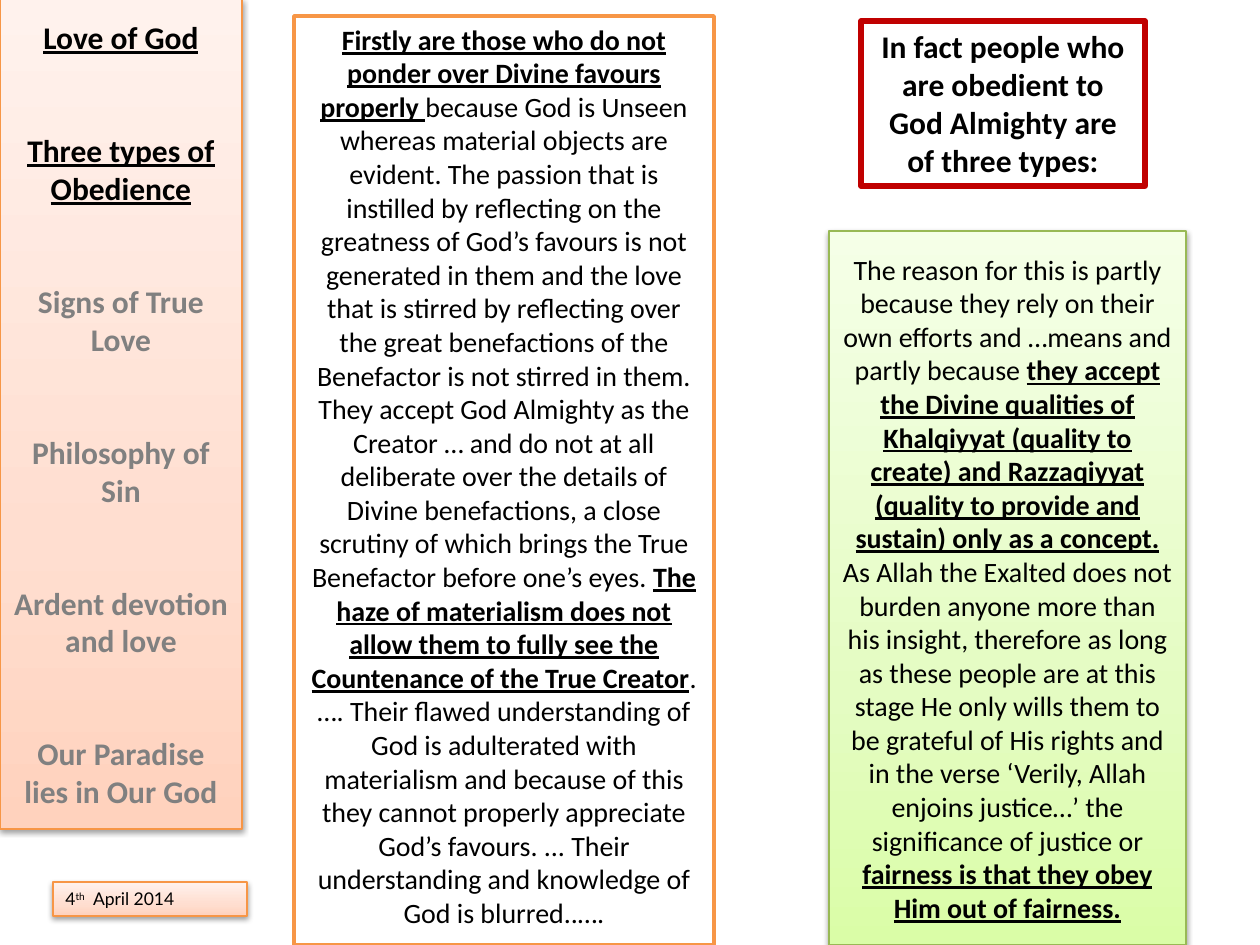
import copy

import pptx
import pptx.util
from pptx.dml.color import RGBColor
from pptx.enum.shapes import MSO_SHAPE
from pptx.enum.text import MSO_ANCHOR, MSO_AUTO_SIZE, PP_ALIGN
from pptx.oxml import parse_xml
from pptx.oxml.ns import nsdecls, qn

PX_PER_INCH = 126

BLACK = RGBColor(0x00, 0x00, 0x00)
WHITE = RGBColor(0xFF, 0xFF, 0xFF)
GREY = RGBColor(0x80, 0x80, 0x80)
RED = RGBColor(0xC0, 0x00, 0x00)
ORANGE = RGBColor(0xF7, 0x96, 0x46)
GREEN = RGBColor(0x98, 0xB9, 0x55)
# Gradient colours, from the bottom edge to the top
PEACH_FADE = [RGBColor(0xFF, 0xD2, 0xBD), RGBColor(0xFF, 0xDE, 0xD0), RGBColor(0xFF, 0xF2, 0xED)]
LIME_FADE = [RGBColor(0xDA, 0xFD, 0xA7), RGBColor(0xE4, 0xFC, 0xC2), RGBColor(0xF5, 0xFF, 0xE7)]
FADE_POSITIONS = [0, 0.35, 1]

HEADING = "In fact people who are obedient to God Almighty are of three types:"

# Section name, and whether it has been reached
SECTIONS = [
    ("Love of God", True),
    ("Three types of Obedience", True),
    ("Signs of True Love", False),
    ("Philosophy of Sin", False),
    ("Ardent devotion and love", False),
    ("Our Paradise lies in Our God", False),
]

# Passages as (text, emphasised)
FIRST_TYPE = [
    ("Firstly are those who do not ponder over Divine favours properly ", True),
    ("because God is Unseen whereas material objects are evident. The passion that is "
     "instilled by reflecting on the greatness of God’s favours is not generated in them "
     "and the love that is stirred by reflecting over the great benefactions of the "
     "Benefactor is not stirred in them. They accept God Almighty as the Creator … and do "
     "not at all deliberate over the details of Divine benefactions, a close scrutiny of "
     "which brings the True Benefactor before one’s eyes. ", False),
    ("The haze of materialism does not allow them to fully see the Countenance of the "
     "True Creator", True),
    (". …. Their flawed understanding of God is adulterated with materialism and because "
     "of this they cannot properly appreciate God’s favours. ... Their understanding and "
     "knowledge of God is blurred..….", False),
]
REASON = [
    ("The reason for this is partly because they rely on their own efforts and …means and "
     "partly because ", False),
    ("they accept the Divine qualities of Khalqiyyat (quality to create) and Razzaqiyyat "
     "(quality to provide and sustain) only as a concept.", True),
    (" As Allah the Exalted does not burden anyone more than his insight, therefore as "
     "long as these people are at this stage He only wills them to be grateful of His "
     "rights and in the verse ‘Verily, Allah enjoins justice…’ the significance of "
     "justice or ", False),
    ("fairness is that they obey Him out of fairness.", True),
]


def px(n):
    return pptx.util.Emu(round(n * 914400 / PX_PER_INCH))


def place(sp, x, y, w, h):
    sp.left, sp.top, sp.width, sp.height = px(x), px(y), px(w), px(h)


def add_box(s, x, y, w, h):
    sp = s.shapes.add_shape(MSO_SHAPE.RECTANGLE, px(x), px(y), px(w), px(h))
    sp.shadow.inherit = False
    return sp


def outline(sp, color, width):
    sp.line.color.rgb = color
    sp.line.width = pptx.util.Pt(width)


def style_plain(sp, line, width):
    sp.fill.solid()
    sp.fill.fore_color.rgb = WHITE
    outline(sp, line, width)


def style_faded(sp, colors, line):
    """Three-stop vertical gradient, thin outline and a soft shadow below."""
    sp.fill.gradient()
    sp.fill.gradient_angle = 90
    sp_pr = sp._element.spPr
    stops = sp_pr.find(".//" + qn("a:gsLst"))
    stops.append(copy.deepcopy(stops[-1]))
    for stop, pos, color in zip(sp.fill.gradient_stops, FADE_POSITIONS, colors):
        stop.position = pos
        stop.color.rgb = color
    outline(sp, line, 0.75)
    sp.shadow.inherit = False
    sp_pr.find(qn("a:effectLst")).append(parse_xml(
        f'<a:outerShdw {nsdecls("a")} blurRad="40000" dist="20000" dir="5400000" rotWithShape="0">'
        '<a:srgbClr val="000000"><a:alpha val="38000"/></a:srgbClr></a:outerShdw>'))


def setup_text(sp, anchor):
    tf = sp.text_frame
    tf.word_wrap = True
    tf.auto_size = MSO_AUTO_SIZE.NONE
    tf.vertical_anchor = anchor
    return tf


def format_paragraph(p, size, color=BLACK, bold=False, align=PP_ALIGN.CENTER, name="Calibri"):
    p.alignment = align
    p.font.name, p.font.size = name, pptx.util.Pt(size)
    p.font.color.rgb = color
    p.font.bold = bold


def write_passage(sp, passage, anchor):
    p = setup_text(sp, anchor).paragraphs[0]
    format_paragraph(p, 16)
    for text, emphasised in passage:
        r = p.add_run()
        r.text = text
        r.font.bold = r.font.underline = emphasised


def write_sections(sp):
    tf = setup_text(sp, MSO_ANCHOR.TOP)
    tf.margin_top = px(19)
    for i, (name, reached) in enumerate(SECTIONS):
        p = tf.add_paragraph() if i else tf.paragraphs[0]
        p.text = name
        format_paragraph(p, 18, BLACK if reached else GREY, bold=True)
        p.font.underline = reached
        p.space_before = pptx.util.Pt(43 if i else 0)
        p_pr = p._p.get_or_add_pPr()
        p_pr.set("marL", "0")
        p_pr.set("indent", "0")
        p_pr.insert_element_before(
            parse_xml(f'<a:buNone {nsdecls("a")}/>'), "a:tabLst", "a:defRPr", "a:extLst")


def write_date(sp):
    tf = setup_text(sp, MSO_ANCHOR.TOP)
    tf.word_wrap = False
    p = tf.paragraphs[0]
    format_paragraph(p, 10, align=PP_ALIGN.LEFT, name="Lato")
    runs = [p.add_run() for _ in range(3)]
    for r, text in zip(runs, ("4", "th", "  April 2014")):
        r.text = text
    runs[1].font._element.set("baseline", "30000")


def main():
    prs = pptx.Presentation()
    prs.slide_width, prs.slide_height = px(1260), px(945)
    s = prs.slides.add_slide(prs.slide_layouts[1])

    # Sidebar with the sections
    sidebar = s.placeholders[1]
    place(sidebar, 0, -1, 242, 830)
    style_faded(sidebar, PEACH_FADE, ORANGE)
    write_sections(sidebar)

    # Heading
    title = s.shapes.title
    place(title, 861, 21, 284, 165)
    style_plain(title, RED, 3)
    p = setup_text(title, MSO_ANCHOR.TOP).paragraphs[0]
    p.text = HEADING
    format_paragraph(p, 18, bold=True)

    # Date
    date = add_box(s, 53, 882, 194, 34)
    style_faded(date, PEACH_FADE, ORANGE)
    write_date(date)

    # First type of obedience
    first = add_box(s, 294, 16, 420, 929)
    style_plain(first, ORANGE, 2)
    write_passage(first, FIRST_TYPE, MSO_ANCHOR.TOP)

    # Reason
    reason = add_box(s, 829, 231, 357, 714)
    style_faded(reason, LIME_FADE, GREEN)
    write_passage(reason, REASON, MSO_ANCHOR.MIDDLE)

    prs.save("out.pptx")


if __name__ == "__main__":
    main()
